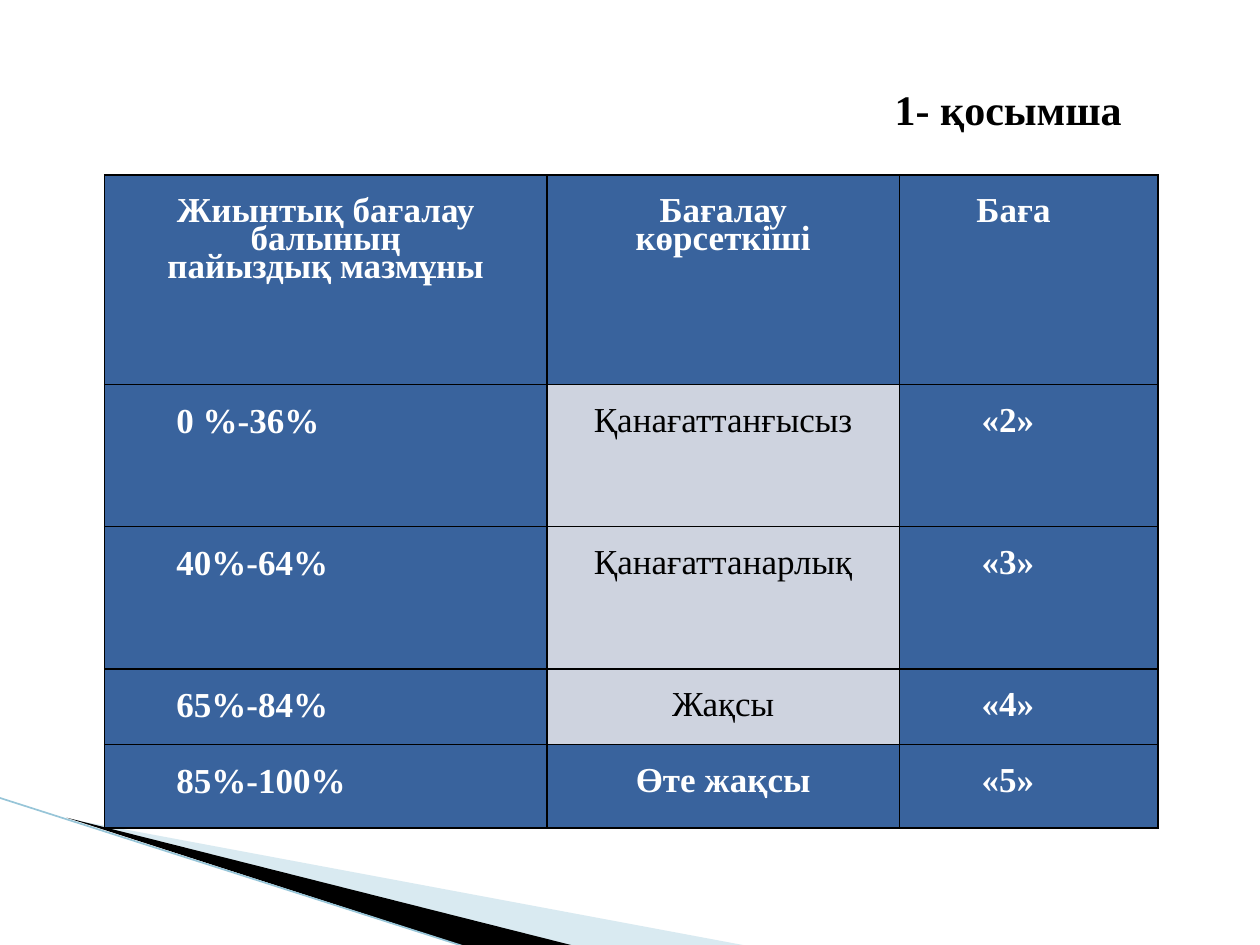
from lxml.etree import SubElement
from pptx import Presentation
from pptx.dml.color import RGBColor
from pptx.enum.shapes import MSO_CONNECTOR
from pptx.enum.text import MSO_ANCHOR, PP_ALIGN
from pptx.oxml.ns import qn
from pptx.util import Inches, Pt

FONT = "Times New Roman"
WHITE, BLACK, BLUE, GREY = "FFFFFF", "000000", "39639D", "CED3DF"
COLUMN_WIDTHS = [3.51, 2.8, 2.05]
ROW_HEIGHTS = [1.66, 1.13, 1.13, 0.6, 0.66]
ROWS = [
    [["Жиынтық бағалау балының", "пайыздық мазмұны"], ["Бағалау көрсеткіші"], ["Баға"]],
    [["0 %-36%"], ["Қанағаттанғысыз"], ["«2»"]],
    [["40%-64%"], ["Қанағаттанарлық"], ["«3»"]],
    [["65%-84%"], ["Жақсы"], ["«4»"]],
    [["85%-100%"], ["Өте жақсы"], ["«5»"]],
]
HEADER_FORMATS = [
    (PP_ALIGN.CENTER, 0.2, 0.2, 15.8),
    (PP_ALIGN.CENTER, 0.28, 0.28, 15.8),
    (PP_ALIGN.LEFT, 0.61, 0, 15.8),
]
BODY_FORMATS = [
    (PP_ALIGN.LEFT, 0.57, 0, 16.1),
    (PP_ALIGN.CENTER, 0.27, 0.27, 15.8),
    (PP_ALIGN.LEFT, 0.65, 0, 15.8),
]


def color(value):
    return RGBColor.from_string(value)


def set_attributes(target, values):
    for name, value in values.items():
        setattr(target, name, value)


def format_font(font, size, value, bold=True):
    set_attributes(font, {"name": FONT, "size": Pt(size), "bold": bold})
    font.color.rgb = color(value)


def add_polygon(slide, points, fill, opacity=100):
    corners = [(Inches(x), Inches(y)) for x, y in points]
    builder = slide.shapes.build_freeform(*corners[0])
    builder.add_line_segments(corners[1:], close=True)
    shape = builder.convert_to_shape()
    shape.shadow.inherit = False
    shape.fill.solid()
    shape.fill.fore_color.rgb = color(fill)
    shape.line.fill.background()
    if opacity < 100:
        fill_color = shape.fill._xPr.find(qn("a:solidFill"))[0]
        SubElement(fill_color, qn("a:alpha"), val=str(opacity * 1000))


def add_line(slide, start, end, value, width):
    ends = [Inches(length) for length in (*start, *end)]
    connector = slide.shapes.add_connector(MSO_CONNECTOR.STRAIGHT, *ends)
    connector.line.color.rgb = color(value)
    connector.line.width = Pt(width)
    SubElement(connector._element.spPr, qn("a:effectLst"))


def add_borders(cell):
    properties = cell._tc.get_or_add_tcPr()
    for index, side in enumerate(("lnL", "lnR", "lnT", "lnB")):
        border = SubElement(properties, qn(f"a:{side}"), w=str(Pt(1)))
        fill = SubElement(border, qn("a:solidFill"))
        SubElement(fill, qn("a:srgbClr"), val=BLACK)
        properties.insert(index, border)


def fill_cell(cell, lines, cell_format, highlighted):
    alignment, left, right, spacing = cell_format
    set_attributes(cell, {
        "margin_left": Inches(left),
        "margin_right": Inches(right),
        "margin_top": Pt(spacing),
        "margin_bottom": 0,
    })
    cell.fill.solid()
    cell.fill.fore_color.rgb = color(GREY if highlighted else BLUE)
    add_borders(cell)
    cell.text_frame.text = "\n".join(lines)
    for paragraph in cell.text_frame.paragraphs:
        set_attributes(paragraph, {"alignment": alignment, "line_spacing": Pt(spacing)})
        format_font(paragraph.runs[0].font, 20, BLACK if highlighted else WHITE, not highlighted)


def add_grade_table(slide):
    frame = slide.shapes.add_table(
        len(ROWS), len(COLUMN_WIDTHS), Inches(0.83), Inches(1.39),
        Inches(sum(COLUMN_WIDTHS)), Inches(sum(ROW_HEIGHTS)))
    table = frame.table
    for column, width in zip(table.columns, COLUMN_WIDTHS):
        column.width = Inches(width)
    for row, height in zip(table.rows, ROW_HEIGHTS):
        row.height = Inches(height)
    for row_index, row in enumerate(ROWS):
        formats = BODY_FORMATS if row_index else HEADER_FORMATS
        for column_index, lines in enumerate(row):
            highlighted = column_index == 1 and 0 < row_index < len(ROWS) - 1
            fill_cell(table.cell(row_index, column_index), lines,
                      formats[column_index], highlighted)


def set_title(slide, text):
    title = slide.shapes.title
    set_attributes(title, {
        "left": Inches(6.5), "top": Inches(0.61),
        "width": Inches(2.53), "height": Inches(0.5),
    })
    set_attributes(title.text_frame, {
        "text": text, "word_wrap": False, "margin_left": Inches(0.6),
        "vertical_anchor": MSO_ANCHOR.MIDDLE,
    })
    paragraph = title.text_frame.paragraphs[0]
    paragraph.alignment = PP_ALIGN.LEFT
    format_font(paragraph.runs[0].font, 24, BLACK)


def main():
    presentation = Presentation()
    set_attributes(presentation, {"slide_width": Inches(10), "slide_height": Inches(7.5)})
    slide = presentation.slides.add_slide(presentation.slide_layouts[5])
    set_title(slide, "1- қосымша")
    add_polygon(slide, [(0.55, 6.5), (5.95, 7.51), (4.56, 7.51)], "A0CBDC", 40)
    add_polygon(slide, [(0.53, 6.49), (4.57, 7.51), (3.72, 7.52)], BLACK)
    add_line(slide, (-0.01, 6.33), (3.71, 7.52), "97C5D8", 0.95)
    add_grade_table(slide)
    presentation.save("out.pptx")


if __name__ == "__main__":
    main()
